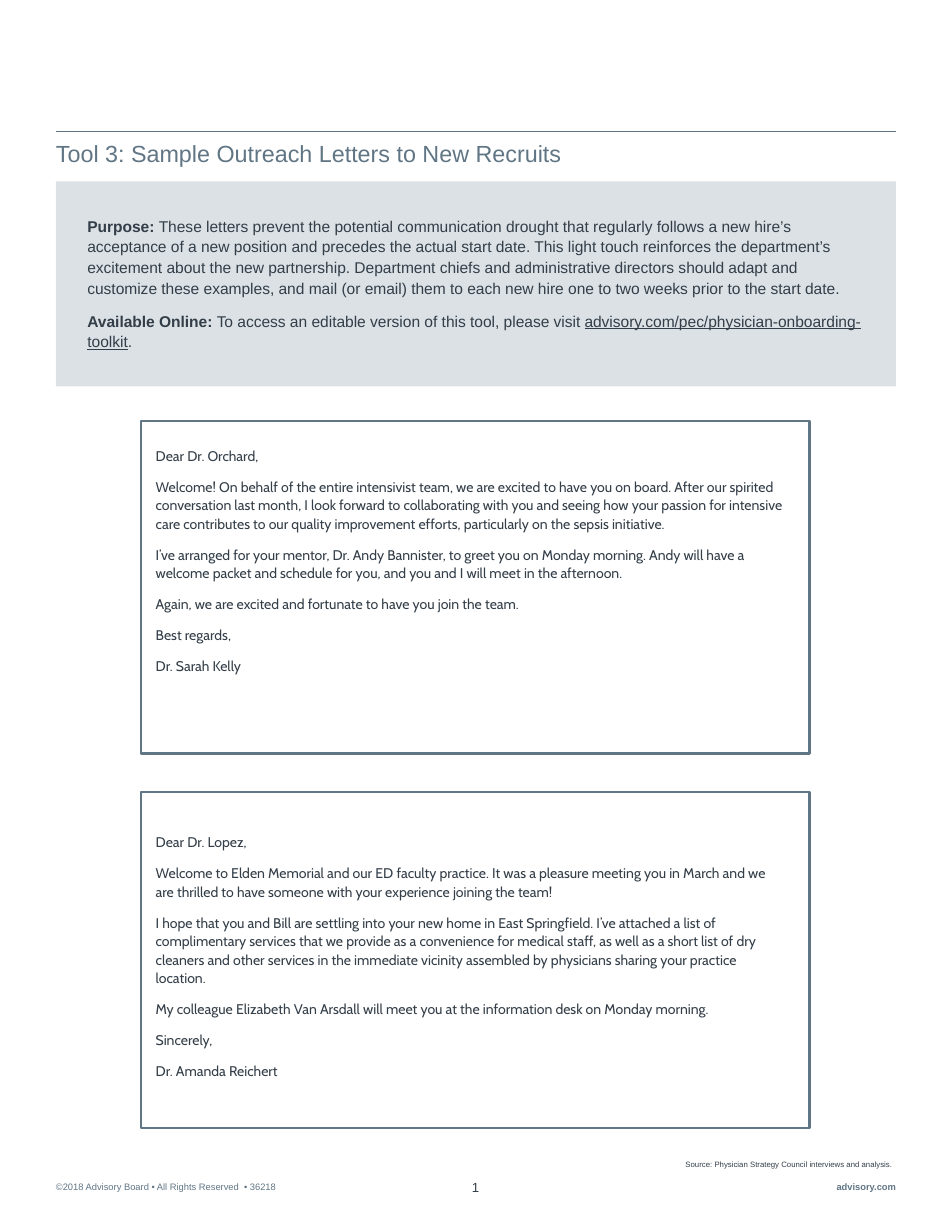
"""Builds a letter-size page with two sample outreach letters to new recruits."""
from pptx import Presentation
from pptx.dml.color import RGBColor as Rgb
from pptx.enum.shapes import MSO_CONNECTOR as Link, MSO_SHAPE as Kind
from pptx.enum.text import MSO_ANCHOR as Anchor, PP_ALIGN as Align
from pptx.oxml.xmlchemy import OxmlElement as Node
from pptx.util import Inches, Pt

theme = {
    "slate": Rgb.from_string("617685"),
    "ink": Rgb.from_string("333E48"),
    "mist": Rgb.from_string("DBE1E5"),
    "sans": "Arial",
    "hand": "Cabin",
    "title": Pt(15),
    "intro": Pt(10),
    "letter": Pt(9),
    "page": Pt(8.5),
    "foot": Pt(6),
    "source": Pt(5),
}

deck = Presentation()
deck.slide_width, deck.slide_height = Inches(8.5), Inches(11)
page = deck.slides.add_slide(deck.slide_layouts[6])
col, row = deck.slide_width / 34, deck.slide_height / 44


def grid(x, y, w, h):
    return round(x * col), round(y * row), round(w * col), round(h * row)


def write(area, paras, size, color="ink", face="sans", align=Align.LEFT,
          anchor=Anchor.TOP, flow=None):
    frame = page.shapes.add_textbox(*grid(*area)).text_frame
    setup = {"word_wrap": True, "vertical_anchor": anchor, "margin_left": 0,
             "margin_right": 0, "margin_top": 0, "margin_bottom": 0}
    for key, val in setup.items():
        setattr(frame, key, val)
    for i, runs in enumerate(paras):
        para = frame.add_paragraph() if i else frame.paragraphs[0]
        para.alignment = align
        for key, val in (flow or {}).items():
            if i or key != "space_before":
                setattr(para, key, val)
        for text, style in runs:
            run = para.add_run()
            run.text = text
            run.font.color.rgb = theme[color]
            look = {"name": theme[face], "size": theme[size], **style}
            for key, val in look.items():
                setattr(run.font, key, val)


left, wide = 2, 30
right = left + wide
prose = {"line_spacing": 1.1, "space_before": Pt(8)}
bold, under = {"bold": True}, {"underline": True}

rule = page.shapes.add_connector(
    Link.STRAIGHT, round(left * col), round(4.68 * row),
    round(right * col), round(4.68 * row))
rule.line.color.rgb = theme["slate"]
rule.line.width = Pt(0.5)
rule._element.spPr.append(Node("a:effectLst"))

panel = page.shapes.add_shape(Kind.RECTANGLE, *grid(left, 6.48, wide, 7.32))
panel.shadow.inherit = False
panel.fill.solid()
panel.fill.fore_color.rgb = theme["mist"]
panel.line.fill.background()

write((left, 4.96, wide, 1),
      [[("Tool 3: Sample Outreach Letters to New Recruits", {})]],
      "title", "slate")

intro = [
    [("Purpose: ", bold),
     ("These letters prevent the potential communication drought that "
      "regularly follows a new hire’s acceptance of a new position and "
      "precedes the actual start date. This light touch reinforces the "
      "department’s excitement about the new partnership. Department chiefs "
      "and administrative directors should adapt and customize these "
      "examples, and mail (or email) them to each new hire one to two weeks "
      "prior to the start date.", {})],
    [("Available Online: ", bold),
     ("To access an editable version of this tool, please visit ", {}),
     ("advisory.com/pec/physician-onboarding-toolkit", under),
     (".", {})],
]
write((3.12, 7.68, 27.64, 4), intro, "intro", flow=prose)

letters = [
    (15.04, 11.88, 15.92, 10.16, [
        "Dear Dr. Orchard,",
        "Welcome! On behalf of the entire intensivist team, we are excited to "
        "have you on board. After our spirited conversation last month, I "
        "look forward to collaborating with you and seeing how your passion "
        "for intensive care contributes to our quality improvement efforts, "
        "particularly on the sepsis initiative.",
        "I’ve arranged for your mentor, Dr. Andy Bannister, to greet you on "
        "Monday morning. Andy will have a welcome packet and schedule for "
        "you, and you and I will meet in the afternoon.",
        "Again, we are excited and fortunate to have you join the team.",
        "Best regards,",
        "Dr. Sarah Kelly",
    ]),
    (28.28, 12, 29.72, 9.32, [
        "Dear Dr. Lopez,",
        "Welcome to Elden Memorial and our ED faculty practice. It was a "
        "pleasure meeting you in March and we are thrilled to have someone "
        "with your experience joining the team!",
        "I hope that you and Bill are settling into your new home in East "
        "Springfield. I’ve attached a list of complimentary services that we "
        "provide as a convenience for medical staff, as well as a short list "
        "of dry cleaners and other services in the immediate vicinity "
        "assembled by physicians sharing your practice location.",
        "My colleague Elizabeth Van Arsdall will meet you at the information "
        "desk on Monday morning.",
        "Sincerely,",
        "Dr. Amanda Reichert",
    ]),
]
for top, tall, start, depth, lines in letters:
    card = page.shapes.add_shape(Kind.RECTANGLE, *grid(5.04, top, 23.88, tall))
    card.shadow.inherit = False
    card.fill.background()
    card.line.color.rgb = theme["slate"]
    card.line.width = Pt(1.5)
    write((5.56, start, 22.48, depth), [[(line, {})] for line in lines],
          "letter", face="hand", flow=prose)

write((24.48, 41.44, 7.52, 0.32),
      [[("Source: Physician Strategy Council interviews and analysis.", {})]],
      "source", anchor=Anchor.BOTTOM)

footer = [
    (left, 42.2, 10, 0.4, "©2018 Advisory Board • All Rights Reserved  • 36218",
     {}, "foot", "slate", Align.LEFT),
    (16.08, 42.12, 1.8, 0.56, "1", {}, "page", "ink", Align.CENTER),
    (right - 3.44, 42.2, 3.44, 0.4, "advisory.com",
     bold, "foot", "slate", Align.RIGHT),
]
for x, y, w, h, text, style, size, color, align in footer:
    write((x, y, w, h), [[(text, style)]], size, color, align=align)

deck.save("out.pptx")
